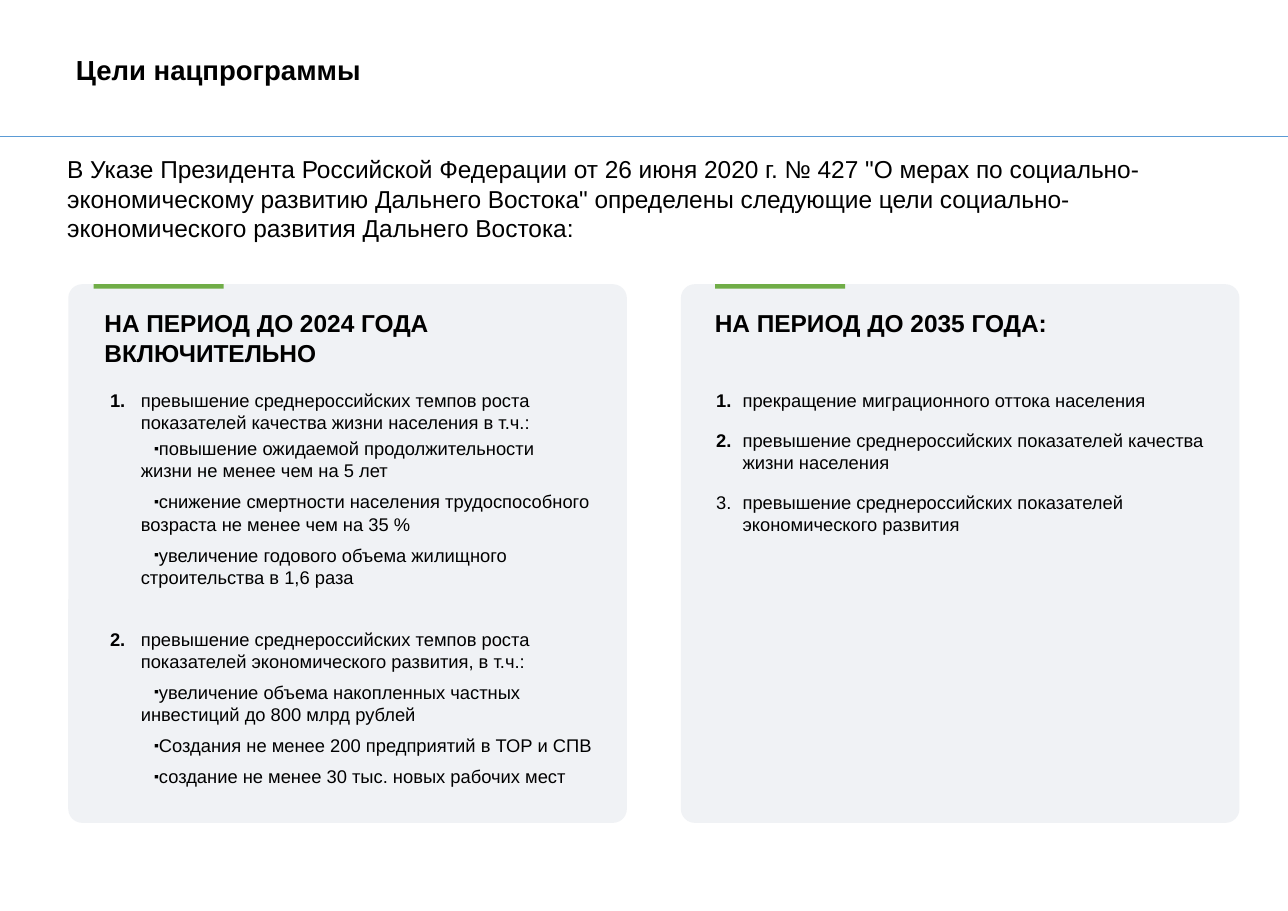
from lxml import etree
from pptx import Presentation
from pptx import util as u
from pptx.dml.color import RGBColor
from pptx.enum import shapes, text
from pptx.oxml.ns import qn

PX = 9144  # 100 px to the inch
WIDTH, HEIGHT = 1169, 827
BLACK, PANEL, GREEN, BLUE = "000000", "F0F2F5", "70AD47", "5B9BD5"
FONT = "Arial"

TITLE = "Цели нацпрограммы"
INTRO = (
    'В Указе Президента Российской Федерации от 26 июня 2020 г. № 427 "О мерах по '
    'социально-экономическому развитию Дальнего Востока" определены следующие цели '
    "социально-экономического развития Дальнего Востока:"
)

# Paragraph formats: margin and indent in px, spacing in points
FIRST_GOAL = {"margin": 28, "indent": -28, "before": 0, "after": 0}
NEXT_GOAL = {"margin": 28, "indent": -28, "before": 23, "after": 3}
MEASURE = {"margin": 28, "indent": 12, "before": 3, "after": 3, "bullet": "▪"}
LONG_GOAL = {"margin": 24, "indent": -28, "before": 0, "after": 12}

# Each goal: format, bold lead, plain text
GOALS_2024 = [
    (FIRST_GOAL, "1.\t", "превышение среднероссийских темпов роста показателей качества жизни населения в т.ч.:"),
    (MEASURE, "", "повышение ожидаемой продолжительности\nжизни не менее чем на 5 лет"),
    (MEASURE, "", "снижение смертности населения трудоспособного возраста не менее чем на 35 %"),
    (MEASURE, "", "увеличение годового объема жилищного строительства в 1,6 раза"),
    (NEXT_GOAL, "2.\t", "превышение среднероссийских темпов роста показателей экономического развития, в т.ч.:"),
    (MEASURE, "", "увеличение объема накопленных частных инвестиций до 800 млрд рублей"),
    (MEASURE, "", "Создания не менее 200 предприятий в ТОР и СПВ"),
    (MEASURE, "", "создание не менее 30 тыс. новых рабочих мест"),
]
GOALS_2035 = [
    (LONG_GOAL, "1.\t", "прекращение миграционного оттока населения"),
    (LONG_GOAL, "2.\t", "превышение среднероссийских показателей качества жизни населения"),
    (LONG_GOAL, "", "3.\tпревышение среднероссийских показателей экономического развития"),
]

PANEL_TOP, PANEL_WIDTH, PANEL_HEIGHT = 258, 507, 489
PERIODS = [
    {
        "left": 62, "accent": 85,
        "heading": "НА ПЕРИОД ДО 2024 ГОДА\nВКЛЮЧИТЕЛЬНО", "heading_box": (85, 275, 324, 64),
        "goals": GOALS_2024, "goals_box": (90, 348, 465, 376), "inset": 10,
    },
    {
        "left": 618, "accent": 649,
        "heading": "НА ПЕРИОД ДО 2035 ГОДА:", "heading_box": (639, 275, 325, 37),
        "goals": GOALS_2035, "goals_box": (650, 348, 455, 182), "inset": 0,
    },
]


def px(*lengths):
    return [u.Emu(length * PX) for length in lengths]


def colour(value):
    return RGBColor.from_string(value)


def add_block(slide, kind, box, fill):
    shape = slide.shapes.add_shape(kind, *px(*box))
    shape.shadow.inherit = False
    shape.fill.solid()
    shape.fill.fore_color.rgb = colour(fill)
    shape.line.fill.background()
    return shape


def add_frame(slide, box, **settings):
    """Add a text box and return its text frame; settings override the defaults."""
    frame = slide.shapes.add_textbox(*px(*box)).text_frame
    defaults = {"word_wrap": True, "auto_size": text.MSO_AUTO_SIZE.SHAPE_TO_FIT_TEXT}
    for name, value in {**defaults, **settings}.items():
        setattr(frame, name, value)
    return frame


def write(paragraph, words, size, bold=False):
    """Append words to the paragraph, with a line break at each newline."""
    for number, line in enumerate(words.split("\n")):
        if number:
            paragraph.add_line_break()
        run = paragraph.add_run()
        run.text = line
        values = {"name": FONT, "size": u.Pt(size), "bold": bold}
        for name, value in values.items():
            setattr(run.font, name, value)
        run.font.color.rgb = colour(BLACK)


def format_goal(paragraph, style):
    paragraph.space_before = u.Pt(style["before"])
    paragraph.space_after = u.Pt(style["after"])
    properties = paragraph._p.get_or_add_pPr()
    properties.set("marL", str(style["margin"] * PX))
    properties.set("indent", str(style["indent"] * PX))
    if "bullet" in style:
        etree.SubElement(properties, qn("a:buSzPct"), val="75000")
        etree.SubElement(properties, qn("a:buFont"), typeface=FONT)
        etree.SubElement(properties, qn("a:buChar"), char=style["bullet"])


def add_goals(slide, period):
    frame = add_frame(slide, period["goals_box"], margin_left=px(period["inset"])[0])
    for number, (style, lead, words) in enumerate(period["goals"]):
        paragraph = frame.add_paragraph() if number else frame.paragraphs[0]
        format_goal(paragraph, style)
        if lead:
            write(paragraph, lead, 12, bold=True)
        write(paragraph, words, 12)


def add_period(slide, period):
    panel_box = (period["left"], PANEL_TOP, PANEL_WIDTH, PANEL_HEIGHT)
    panel = add_block(slide, shapes.MSO_SHAPE.ROUNDED_RECTANGLE, panel_box, PANEL)
    panel.adjustments[0] = 0.026
    add_goals(slide, period)
    heading = add_frame(slide, period["heading_box"], word_wrap=False)
    write(heading.paragraphs[0], period["heading"], 16, bold=True)
    accent_box = (period["accent"], PANEL_TOP, 118, 4)
    add_block(slide, shapes.MSO_SHAPE.RECTANGLE, accent_box, GREEN)


def add_header(slide):
    rule = slide.shapes.add_connector(shapes.MSO_CONNECTOR.STRAIGHT, *px(0, 124, WIDTH, 124))
    rule.line.color.rgb = colour(BLUE)
    rule.line.width = u.Pt(0.5)
    etree.SubElement(rule._element.spPr, qn("a:effectLst"))

    title = add_frame(
        slide, (59, 42, 768, 45),
        auto_size=text.MSO_AUTO_SIZE.NONE, vertical_anchor=text.MSO_ANCHOR.MIDDLE,
    ).paragraphs[0]
    title.line_spacing = 0.9
    write(title, TITLE, 18, bold=True)

    sides = ("left", "top", "right", "bottom")
    intro = add_frame(slide, (61, 140, 1018, 81), **{f"margin_{side}": 0 for side in sides})
    write(intro.paragraphs[0], INTRO, 16)


def main():
    presentation = Presentation()
    presentation.slide_width, presentation.slide_height = px(WIDTH, HEIGHT)
    slide = presentation.slides.add_slide(presentation.slide_layouts[6])
    add_header(slide)
    for period in PERIODS:
        add_period(slide, period)
    presentation.save("out.pptx")


if __name__ == "__main__":
    main()
